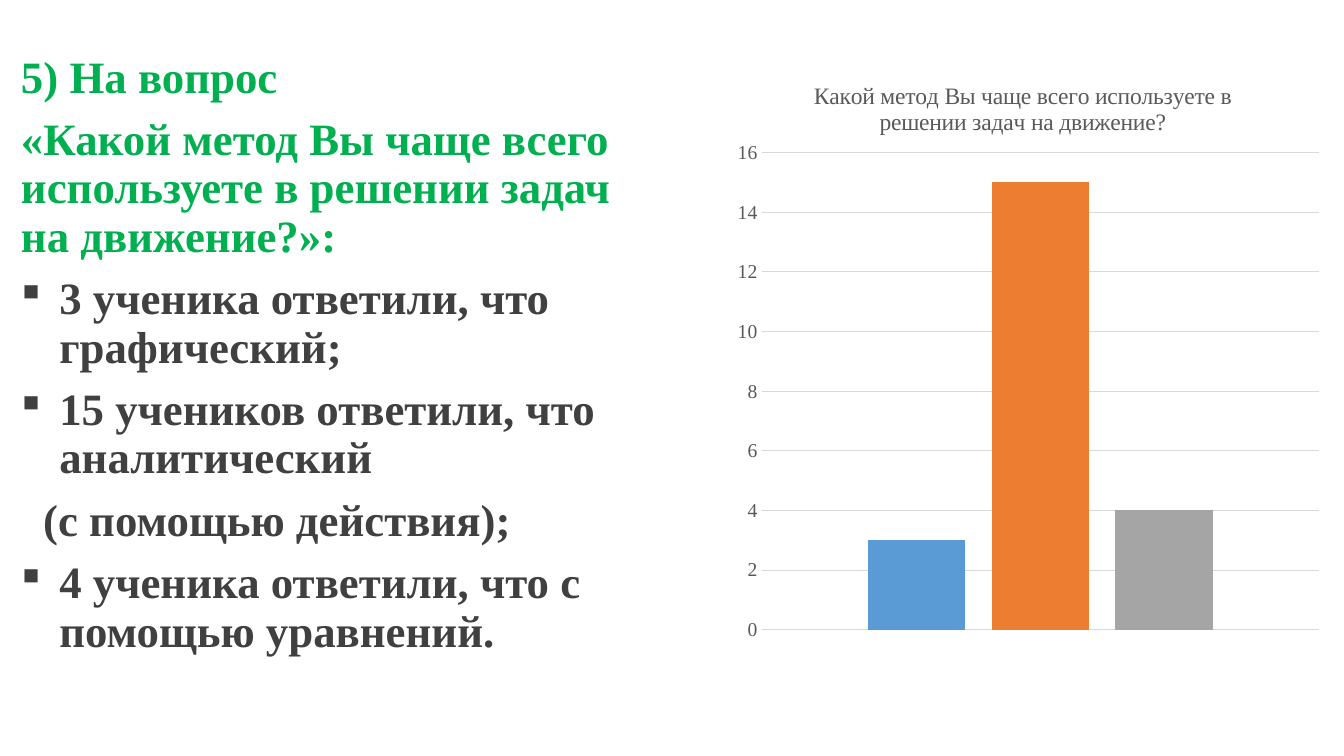
from lxml import etree
from pptx import Presentation
from pptx import util as u
from pptx.chart.data import CategoryChartData
from pptx.dml.color import RGBColor
from pptx.enum import chart as ec
from pptx.oxml import parse_xml
from pptx.oxml.ns import qn

FONT = "Times New Roman"
QUESTION = "Какой метод Вы чаще всего используете в решении задач на движение?"
GREEN, DARK, GREY = "00B050", "404040", "595959"


def rgb(value):
    return RGBColor.from_string(value)


def style(font, size, color, bold=False):
    font.name = FONT
    font.size = u.Pt(size)
    font.bold = bold
    font.color.rgb = rgb(color)


prs = Presentation()
prs.slide_width = u.Inches(13.33)
prs.slide_height = u.Inches(7.5)
s = prs.slides.add_slide(prs.slide_layouts[6])

sp = s.shapes.add_textbox(u.Inches(0.11), u.Inches(0.49), u.Inches(6.59), u.Inches(6.5))
tf = sp.text_frame
tf.word_wrap = True
lines = [
    ("5) На вопрос", GREEN, 0, False),
    (f"«{QUESTION}»:", GREEN, 0, False),
    ("3 ученика ответили, что графический;", DARK, 0.38, True),
    ("15 учеников ответили, что аналитический", DARK, 0.38, True),
    ("(с помощью действия);", DARK, 0.22, False),
    ("4 ученика ответили, что с помощью уравнений.", DARK, 0.38, True),
]
for i, (line, color, margin, bullet) in enumerate(lines):
    p = tf.add_paragraph() if i else tf.paragraphs[0]
    p.line_spacing = 0.9
    p.space_before = u.Pt(10 if i else 0)
    pPr = p._p.get_or_add_pPr()
    pPr.set("marL", str(u.Inches(margin)))
    pPr.set("indent", str(u.Inches(-margin if bullet else 0)))
    if bullet:
        etree.SubElement(pPr, qn("a:buFont")).set("typeface", "Wingdings")
        etree.SubElement(pPr, qn("a:buChar")).set("char", "§")
    r = p.add_run()
    r.text = line
    style(r.font, 32, color, True)

data = CategoryChartData()
data.categories = ["1"]
answers = [(3, "5B9BD5"), (15, "ED7D31"), (4, "A5A5A5")]
for i, (count, color) in enumerate(answers, 1):
    data.add_series(f"Series {i}", [count])
ch = s.shapes.add_chart(
    ec.XL_CHART_TYPE.COLUMN_CLUSTERED,
    u.Inches(7.2), u.Inches(0.58), u.Inches(5.89), u.Inches(6.23), data,
).chart
style(ch.font, 14, GREY)
ch.has_legend = False
ch.has_title = True
p = ch.chart_title.text_frame.paragraphs[0]
r = p.add_run()
r.text = QUESTION
style(r.font, 16.8, GREY)
ch.chart_title.include_in_layout = False

plot = ch.plots[0]
plot.gap_width = 219
plot.overlap = -27
plot.vary_by_categories = False
for series, (count, color) in zip(plot.series, answers):
    series.format.fill.solid()
    series.format.fill.fore_color.rgb = rgb(color)

ch.category_axis.visible = False
axis = ch.value_axis
axis.minimum_scale, axis.maximum_scale, axis.major_unit = 0, 16, 2
axis.major_tick_mark = ec.XL_TICK_MARK.NONE
axis.format.line.fill.background()
style(axis.tick_labels.font, 14, GREY)
grid = axis.major_gridlines.format.line
grid.color.rgb = rgb("D9D9D9")
grid.width = u.Pt(0.75)

area = ch._chartSpace.chart.plotArea
for old in area.findall(qn("c:layout")):
    area.remove(old)
area.insert(0, parse_xml(
    '<c:layout xmlns:c="http://schemas.openxmlformats.org/drawingml/2006/chart"><c:manualLayout>'
    '<c:layoutTarget val="inner"/><c:xMode val="edge"/><c:yMode val="edge"/>'
    '<c:x val="0.06"/><c:y val="0.15"/><c:w val="0.94"/><c:h val="0.76"/>'
    '</c:manualLayout></c:layout>'
))

prs.save("out.pptx")
